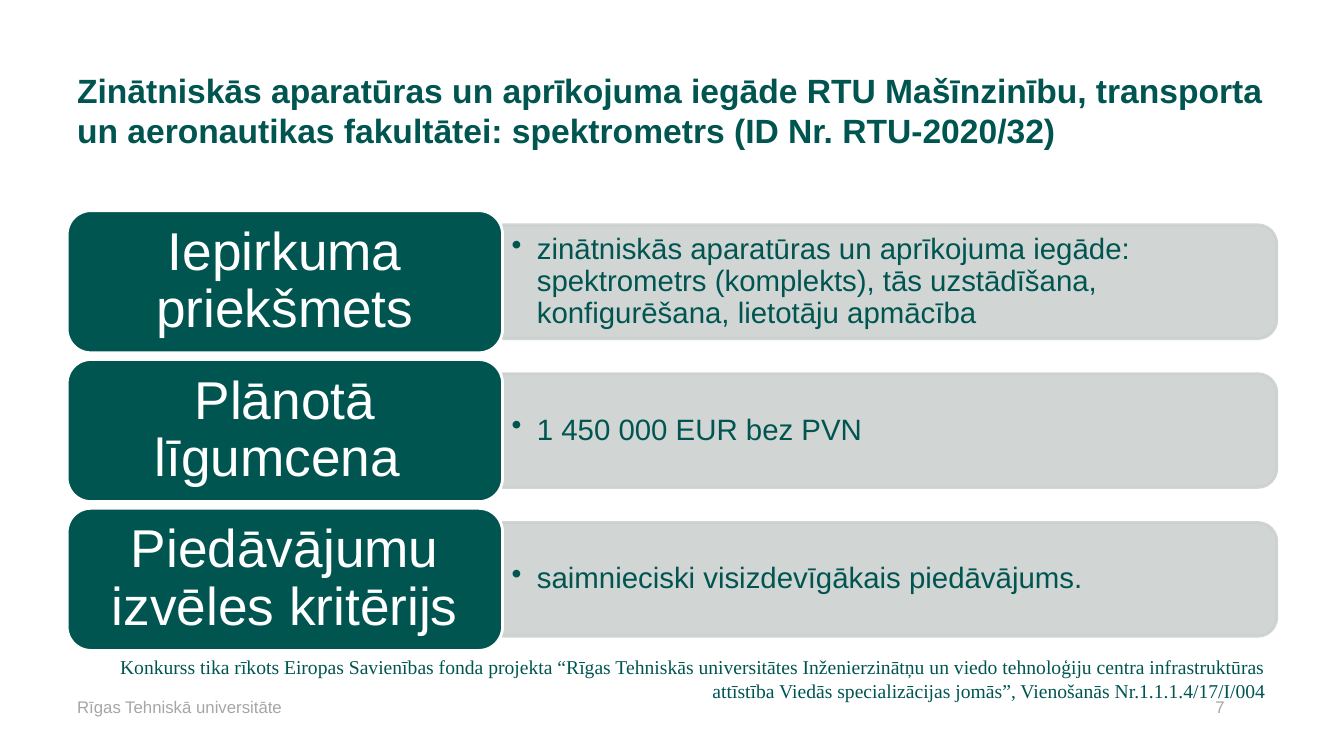
from typing import NamedTuple

from pptx import Presentation
from pptx.dml.color import RGBColor
from pptx.enum.shapes import MSO_SHAPE
from pptx.enum.text import MSO_ANCHOR, PP_ALIGN
from pptx.oxml.ns import qn
from pptx.util import Pt

ROUND_RECT = MSO_SHAPE.ROUNDED_RECTANGLE
ROUND_TOP = MSO_SHAPE.ROUND_2_SAME_RECTANGLE
TOP, MIDDLE = MSO_ANCHOR.TOP, MSO_ANCHOR.MIDDLE
LEFT, CENTER, RIGHT = PP_ALIGN.LEFT, PP_ALIGN.CENTER, PP_ALIGN.RIGHT

COLORS = {"green": "005551", "grey": "CCD1D0", "muted": "A6A6A6", "white": "FFFFFF"}

# Row geometry in points
ROW_LEFT, ROW_TOP, ROW_PITCH = 48, 150.5, 106.3
LABEL_W, LABEL_H = 311, 101.5
BAR_W, BAR_H = 553, 81.2
DETAIL_W, DETAIL_H = 549.4, 73.4
BULLET_INDENT = 18


class Row(NamedTuple):
    label: str
    detail: str


ROWS = [
    Row("Iepirkuma priekšmets",
        "zinātniskās aparatūras un aprīkojuma iegāde: spektrometrs (komplekts), "
        "tās uzstādīšana, konfigurēšana, lietotāju apmācība"),
    Row("Plānotā līgumcena ", "1 450 000 EUR bez PVN"),
    Row("Piedāvājumu izvēles kritērijs", "saimnieciski visizdevīgākais piedāvājums."),
]


def rgb(name: str) -> RGBColor:
    return RGBColor.from_string(COLORS[name])


def write(sp, text: str, *, size: float, color: str = "green", font: str = "Arial",
          bold: bool = False, align=LEFT, anchor=TOP, spacing: float = 1.0,
          margins: tuple[float, float] = (7.2, 3.6), bullet: bool = False) -> None:
    tf = sp.text_frame
    tf.word_wrap = True
    tf.vertical_anchor = anchor
    tf.margin_left = tf.margin_right = Pt(margins[0])
    tf.margin_top = tf.margin_bottom = Pt(margins[1])
    p = tf.paragraphs[0]
    p.alignment = align
    p.line_spacing = spacing
    r = p.add_run()
    r.text = text
    r.font.name, r.font.size, r.font.bold = font, Pt(size), bold
    r.font.color.rgb = rgb(color)
    if bullet:
        pPr = p._p.get_or_add_pPr()
        pPr.set("marL", str(Pt(BULLET_INDENT)))
        pPr.set("indent", str(-Pt(BULLET_INDENT)))
        pPr.append(pPr.makeelement(qn("a:buChar"), {"char": "•"}))


def add_text(slide, x: float, y: float, w: float, h: float, text: str, **style) -> None:
    write(slide.shapes.add_textbox(Pt(x), Pt(y), Pt(w), Pt(h)), text, **style)


def add_box(slide, kind, x: float, y: float, w: float, h: float, fill: str, line: str):
    sp = slide.shapes.add_shape(kind, Pt(x), Pt(y), Pt(w), Pt(h))
    sp.shadow.inherit = False
    sp.fill.solid()
    sp.fill.fore_color.rgb = rgb(fill)
    sp.line.color.rgb = rgb(line)
    sp.line.width = Pt(2)
    return sp


def add_row(slide, row: Row, top: float) -> None:
    mid = top + LABEL_H / 2
    split = ROW_LEFT + LABEL_W

    # Grey bar: a tall shape turned so its rounded corners face right
    bar = add_box(slide, ROUND_TOP, split + (BAR_W - BAR_H) / 2, mid - BAR_W / 2,
                  BAR_H, BAR_W, "grey", "grey")
    bar.rotation = 90
    for clr in bar.element.spPr.iter(qn("a:srgbClr")):
        clr.append(clr.makeelement(qn("a:alpha"), {"val": "90000"}))
    add_text(slide, split, mid - DETAIL_H / 2, DETAIL_W, DETAIL_H, row.detail,
             size=21, anchor=MIDDLE, spacing=0.9, margins=(6.5, 3), bullet=True)

    # Green label
    label = add_box(slide, ROUND_RECT, ROW_LEFT, top, LABEL_W, LABEL_H, "green", "white")
    write(label, row.label, size=38, color="white", align=CENTER, anchor=MIDDLE,
          spacing=0.9, margins=(11.4, 5.7))


def main() -> None:
    prs = Presentation()
    prs.slide_width, prs.slide_height = Pt(960), Pt(540)
    slide = prs.slides.add_slide(prs.slide_layouts[6])

    # Title
    add_text(slide, 48, 28.8, 864, 99.4,
             "Zinātniskās aparatūras un aprīkojuma iegāde RTU Mašīnzinību, transporta "
             "un aeronautikas fakultātei: spektrometrs (ID Nr. RTU-2020/32)",
             size=24, bold=True, anchor=MIDDLE)

    # Footer and page number
    add_text(slide, 48, 494, 259, 28.8, "Rīgas Tehniskā universitāte", size=12, color="muted")
    add_text(slide, 861, 494, 50.4, 28.8, "7", size=12, color="muted")

    # Label and detail rows
    for i, row in enumerate(ROWS):
        add_row(slide, row, ROW_TOP + i * ROW_PITCH)

    # Funding note
    add_text(slide, 65.5, 464.4, 846, 41,
             "Konkurss tika rīkots Eiropas Savienības fonda projekta “Rīgas Tehniskās "
             "universitātes Inženierzinātņu un viedo tehnoloģiju centra infrastruktūras "
             "attīstība Viedās specializācijas jomās”, Vienošanās Nr.1.1.1.4/17/I/004",
             size=14, font="Times New Roman", align=RIGHT)

    prs.save("out.pptx")


if __name__ == "__main__":
    main()
